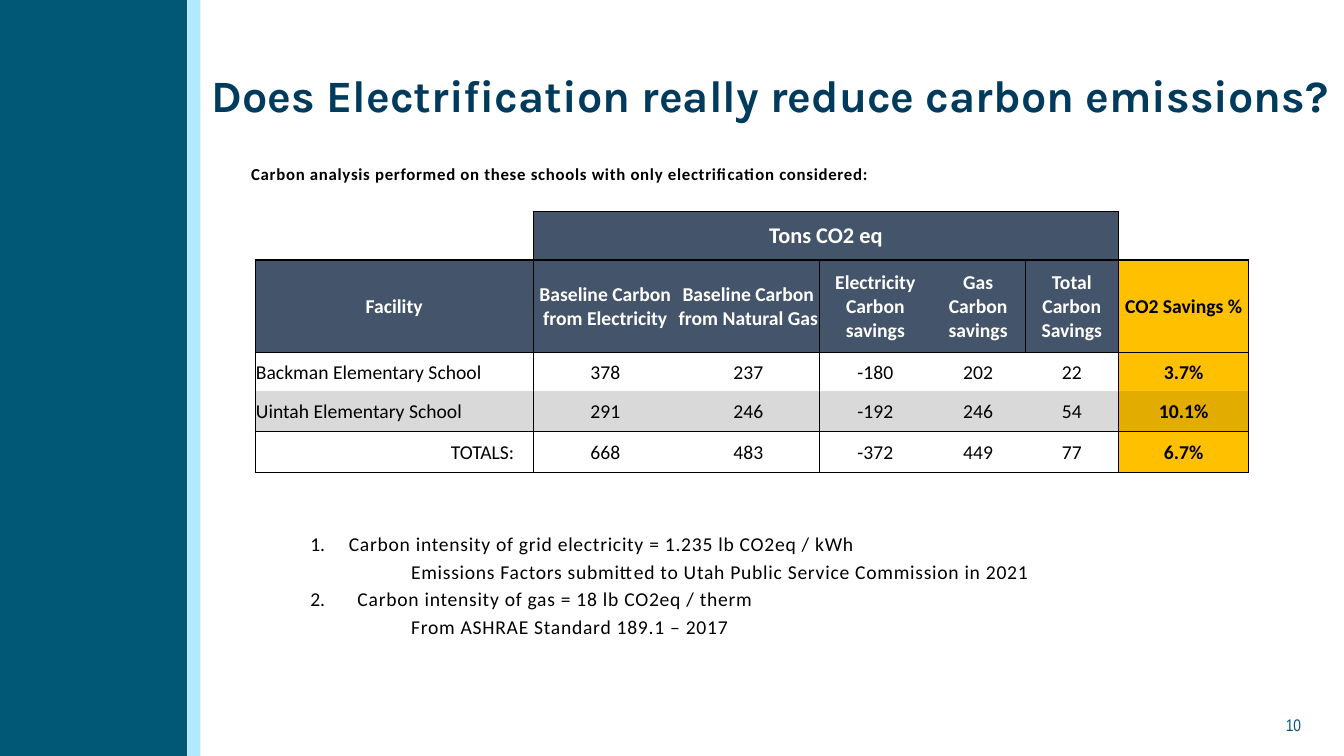
import pptx
import pptx.dml.color
import pptx.enum.shapes
import pptx.enum.text
import pptx.util
from pptx.oxml.ns import qn
from lxml import etree

Cm = pptx.util.Cm
Pt = pptx.util.Pt
ALIGN = pptx.enum.text.PP_ALIGN

COLORS = {
    "teal": "005776", "sky": "B1EAFF", "navy": "003A5D", "slate": "44546A",
    "gold": "FFC000", "dark gold": "E2AC00", "gray": "D9D9D9",
    "black": "000000", "white": "FFFFFF",
}
TITLE = "Does Electrification really reduce carbon emissions?"
SUBTITLE = "Carbon analysis performed on these schools with only electrification considered:"
PAGE_NUMBER = "10"
GROUP_HEADING = "Tons CO2 eq"
TABLE_ROWS = [
    ("", GROUP_HEADING, "", "", "", "", ""),
    ("Facility", "Baseline Carbon from Electricity", "Baseline Carbon from Natural Gas",
     "Electricity Carbon savings", "Gas Carbon savings", "Total Carbon Savings", "CO2 Savings %"),
    ("Backman Elementary School", "378", "237", "-180", "202", "22", "3.7%"),
    ("Uintah Elementary School", "291", "246", "-192", "246", "54", "10.1%"),
    ("TOTALS:", "668", "483", "-372", "449", "77", "6.7%"),
]
COLUMN_WIDTHS = [7.01, 3.63, 3.58, 2.82, 2.36, 2.36, 3.28]
ROW_HEIGHTS = [1.22, 2.34, 0.97, 1.02, 1.02]
NOTES = [
    ("Carbon intensity of grid electricity = 1.235 lb CO2eq / kWh", 1, 0.97),
    ("Emissions Factors submitted to Utah Public Service Commission in 2021", None, 2.54),
    ("Carbon intensity of gas = 18 lb CO2eq / therm", 2, 1.19),
    ("From ASHRAE Standard 189.1 – 2017", None, 2.54),
]
GROUP_COLUMNS = (1, 5)
SAVINGS_COLUMN = 6
RULED_ROW_TOPS = {1, 2, 4, 5}
RULED_COLUMN_LEFTS = {0, 1, 3, 6, 7}


def color(name):
    return pptx.dml.color.RGBColor.from_string(COLORS[name])


def write(para, text, size=14, font="Calibri", ink="black", bold=False,
          align=ALIGN.LEFT, spacing=0, before=0, indent=0, hanging=0, number=None):
    """Put one formatted line of text into a paragraph."""
    properties = para._p.get_or_add_pPr()
    properties.set("marL", str(Cm(indent)))
    properties.set("indent", str(-Cm(hanging)))
    para.alignment = align
    para.space_before = Pt(before)
    if number:
        etree.SubElement(properties, qn("a:buFont"), typeface="+mj-lt")
        etree.SubElement(properties, qn("a:buAutoNum"), type="arabicPeriod", startAt=str(number))
    span = para.add_run()
    span.text = text
    span.font.size = Pt(size)
    span.font.name = font
    span.font.bold = bold
    span.font.color.rgb = color(ink)
    if spacing:
        span._r.get_or_add_rPr().set("spc", str(int(spacing * 100)))


def add_box(page, left, top, width, height, margins=(0.25, 0.13)):
    frame = page.shapes.add_textbox(Cm(left), Cm(top), Cm(width), Cm(height)).text_frame
    frame.word_wrap = True
    frame.margin_left = frame.margin_right = Cm(margins[0])
    frame.margin_top = frame.margin_bottom = Cm(margins[1])
    return frame


def add_band(page, left, width, fill):
    band = page.shapes.add_shape(pptx.enum.shapes.MSO_SHAPE.RECTANGLE,
                                 Cm(left), 0, Cm(width), Cm(19.05))
    band.shadow.inherit = False
    band.fill.solid()
    band.fill.fore_color.rgb = color(fill)
    band.line.fill.background()


def column_rule(row, edge):
    if row == 0:
        return 1 if edge in (GROUP_COLUMNS[0], GROUP_COLUMNS[1] + 1) else 0
    if row == 1 and edge == 5:
        return 0.5
    return 1 if edge in RULED_COLUMN_LEFTS else 0


def row_rule(edge, column):
    if edge == 0:
        return 1 if GROUP_COLUMNS[0] <= column <= GROUP_COLUMNS[1] else 0
    return 1 if edge in RULED_ROW_TOPS else 0


def set_borders(cell, row, column):
    right = GROUP_COLUMNS[1] + 1 if cell.is_merge_origin else column + 1
    widths = {"L": column_rule(row, column), "R": column_rule(row, right),
              "T": row_rule(row, column), "B": row_rule(row + 1, column)}
    properties = cell._tc.get_or_add_tcPr()
    for side, width in widths.items():
        line = etree.SubElement(properties, qn("a:ln" + side), w=str(Pt(width)))
        if width:
            fill = etree.SubElement(line, qn("a:solidFill"))
            etree.SubElement(fill, qn("a:srgbClr"), val=COLORS["black"])
        else:
            etree.SubElement(line, qn("a:noFill"))


def cell_fill(row, column):
    if row == 0:
        return "slate" if GROUP_COLUMNS[0] <= column <= GROUP_COLUMNS[1] else None
    if column == SAVINGS_COLUMN:
        return "dark gold" if row == 3 else "gold"
    return {1: "slate", 3: "gray"}.get(row)


def cell_align(row, column):
    if column or row < 2:
        return ALIGN.CENTER
    return ALIGN.RIGHT if row == 4 else ALIGN.LEFT


def add_carbon_table(page):
    frame = page.shapes.add_table(len(ROW_HEIGHTS), len(COLUMN_WIDTHS), Cm(6.43), Cm(5.33),
                                  Cm(sum(COLUMN_WIDTHS)), Cm(sum(ROW_HEIGHTS)))
    table = frame.table
    table.horz_banding = False
    for column, width in zip(table.columns, COLUMN_WIDTHS):
        column.width = Cm(width)
    for row, height in zip(table.rows, ROW_HEIGHTS):
        row.height = Cm(height)
    table.cell(0, GROUP_COLUMNS[0]).merge(table.cell(0, GROUP_COLUMNS[1]))
    for row, texts in enumerate(TABLE_ROWS):
        for column, text in enumerate(texts):
            cell = table.cell(row, column)
            fill = cell_fill(row, column)
            cell.vertical_anchor = pptx.enum.text.MSO_ANCHOR.MIDDLE
            cell.margin_left = cell.margin_top = Cm(0.02)
            cell.margin_right = Cm(0.48 if (row, column) == (4, 0) else 0.02)
            cell.margin_bottom = 0
            set_borders(cell, row, column)
            if fill:
                cell.fill.solid()
                cell.fill.fore_color.rgb = color(fill)
            else:
                cell.fill.background()
            if text:
                write(cell.text_frame.paragraphs[0], text, size=14 if row else 16,
                      ink="white" if fill == "slate" else "black",
                      bold=row < 2 or column == SAVINGS_COLUMN,
                      align=cell_align(row, column))


def main():
    deck = pptx.Presentation()
    deck.slide_width, deck.slide_height = Cm(33.87), Cm(19.05)
    page = deck.slides.add_slide(deck.slide_layouts[6])
    add_band(page, 0, 4.72, "teal")
    add_band(page, 4.72, 0.33, "sky")

    number = add_box(page, 29.59, 18.01, 3.2, 0.51, margins=(0, 0))
    write(number.paragraphs[0], PAGE_NUMBER, size=12, font="Arial Narrow",
          ink="teal", align=ALIGN.RIGHT)
    title = add_box(page, 5, 1.57, 28.86, 0.97)
    write(title.paragraphs[0], TITLE, size=32, font="Karla", ink="navy",
          bold=True, align=ALIGN.CENTER)
    subtitle = add_box(page, 6.05, 3.99, 21.77, 1.4)
    write(subtitle.paragraphs[0], SUBTITLE, size=12, bold=True, spacing=0.5, indent=0.03)

    add_carbon_table(page)

    notes = add_box(page, 7.57, 13.28, 20.24, 4.5)
    for index, (text, item, indent) in enumerate(NOTES):
        para = notes.add_paragraph() if index else notes.paragraphs[0]
        write(para, text, spacing=0.5, before=2.8 if index else 0, indent=indent,
              hanging=indent if item else 0, number=item)
    deck.save("out.pptx")


if __name__ == "__main__":
    main()
